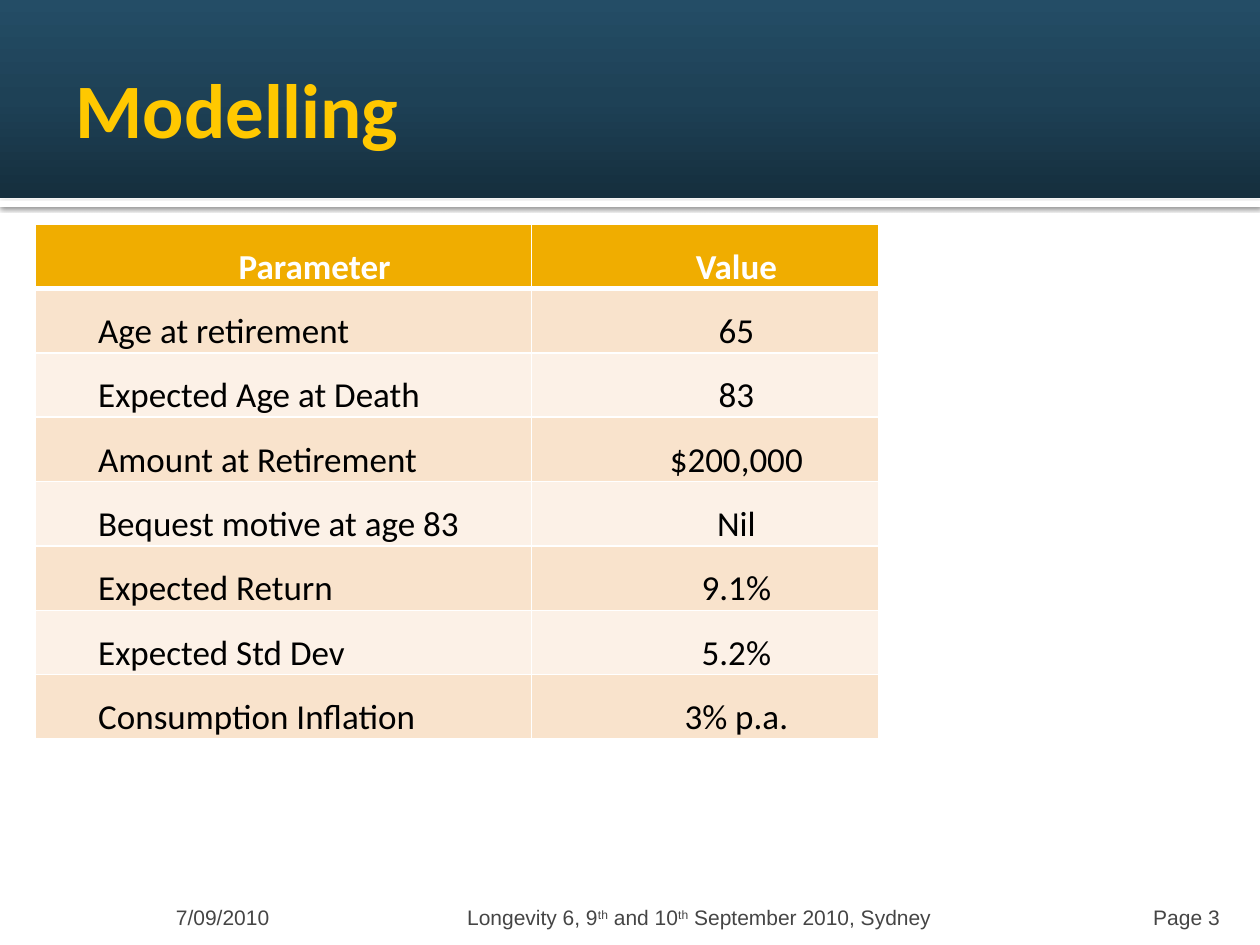
import pptx
import pptx.dml.color
import pptx.enum.shapes
import pptx.enum.text
import pptx.oxml
import pptx.oxml.ns
import pptx.util
from dataclasses import dataclass

Cm = pptx.util.Cm
Pt = pptx.util.Pt
RGB = pptx.dml.color.RGBColor.from_string
ALIGN = pptx.enum.text.PP_ALIGN
ANCHOR = pptx.enum.text.MSO_ANCHOR
NS = pptx.oxml.ns.nsdecls("a")


@dataclass(frozen=True)
class Theme:
    white: str = "FFFFFF"
    black: str = "000000"
    title: str = "FFC800"
    header: str = "F0AD00"
    bands: tuple = ("F9E3CC", "FCF1E7")
    banner: tuple = ((0, "152E3D"), (50, "1E4156"), (100, "244D66"))
    footer: str = "454545"
    heading_font: str = "Calibri"
    footer_font: str = "Arial"
    title_size: int = 44
    table_size: int = 20
    footer_size: int = 12


theme = Theme()


def add_run(p, text, font, size, color, bold=False):
    r = p.add_run()
    r.text = text
    r.font.name = font
    r.font.size = Pt(size)
    r.font.color.rgb = RGB(color)
    r.font.bold = bold
    return r


def set_insets(obj, left, top, right, bottom):
    """Set the margins of a text frame or a table cell, in centimetres."""
    obj.margin_left, obj.margin_top = Cm(left), Cm(top)
    obj.margin_right, obj.margin_bottom = Cm(right), Cm(bottom)


prs = pptx.Presentation()
prs.slide_width, prs.slide_height = Cm(25.4), Cm(19.05)
s = prs.slides.add_slide(prs.slide_layouts[5])

# Header: white strip with a shadow, then the gradient banner
RECT = pptx.enum.shapes.MSO_SHAPE.RECTANGLE
strip = s.shapes.add_shape(RECT, 0, Cm(4.04), prs.slide_width, Cm(0.13))
banner = s.shapes.add_shape(RECT, 0, 0, prs.slide_width, Cm(3.99))
for sp in (strip, banner):
    sp.shadow.inherit = False
    sp.line.fill.background()
strip.fill.solid()
strip.fill.fore_color.rgb = RGB(theme.white)
effects = strip._element.spPr.find(pptx.oxml.ns.qn("a:effectLst"))
effects.append(pptx.oxml.parse_xml(
    f'<a:outerShdw {NS} blurRad="{Pt(2.5)}" dist="{Pt(0.8)}" dir="5400000" rotWithShape="0">'
    f'<a:srgbClr val="{theme.black}"><a:alpha val="60000"/></a:srgbClr></a:outerShdw>'))

banner.fill.gradient()
banner.fill.gradient_angle = 90
stops = banner._element.spPr.find(".//" + pptx.oxml.ns.qn("a:gsLst"))
for stop in list(stops):
    stops.remove(stop)
for pos, color in theme.banner:
    stops.append(pptx.oxml.parse_xml(
        f'<a:gs {NS} pos="{pos * 1000}"><a:srgbClr val="{color}"/></a:gs>'))

# Title, brought in front of the banner
title = s.shapes.title
title.left, title.top, title.width, title.height = Cm(1.27), Cm(0.43), Cm(22.86), Cm(3.48)
s.shapes._spTree.append(title._element)
tf = title.text_frame
tf.vertical_anchor = ANCHOR.MIDDLE
set_insets(tf, 0.25, 0.13, 0.13, 0.13)
p = tf.paragraphs[0]
p.alignment = ALIGN.LEFT
add_run(p, "Modelling", theme.heading_font, theme.title_size, theme.title, True)

# Parameter table
rows = [
    ("Parameter", "Value"),
    ("Age at retirement", "65"),
    ("Expected Age at Death", "83"),
    ("Amount at Retirement", "$200,000"),
    ("Bequest motive at age 83", "Nil"),
    ("Expected Return", "9.1%"),
    ("Expected Std Dev", "5.2%"),
    ("Consumption Inflation", "3% p.a."),
]
col_widths = (10, 7)
row_height = 1.04
table = s.shapes.add_table(len(rows), 2, Cm(0.71), Cm(4.52), Cm(sum(col_widths)),
                           Cm(row_height * len(rows))).table
for column, width in zip(table.columns, col_widths):
    column.width = Cm(width)
for i, row in enumerate(rows):
    table.rows[i].height = Cm(row_height)
    is_header = i == 0
    for j, text in enumerate(row):
        cell = table.cell(i, j)
        cell.vertical_anchor = ANCHOR.MIDDLE
        set_insets(cell, 0, 0, 0, 0)
        tcPr = cell._tc.get_or_add_tcPr()
        for side in "LRTB":
            thick = (is_header and side == "B") or (i == 1 and side == "T")
            tcPr.append(pptx.oxml.parse_xml(
                f'<a:ln{side} {NS} w="{Pt(3 if thick else 1)}"><a:solidFill>'
                f'<a:srgbClr val="{theme.white}"/></a:solidFill></a:ln{side}>'))
        cell.fill.solid()
        cell.fill.fore_color.rgb = RGB(theme.header if is_header else theme.bands[(i - 1) % 2])
        p = cell.text_frame.paragraphs[0]
        p.alignment = ALIGN.CENTER if is_header or j == 1 else ALIGN.LEFT
        p.line_spacing = 1.5
        pPr = p._p.get_or_add_pPr()
        pPr.set("marL", "0")
        pPr.set("indent", str(Cm(1.27)))
        add_run(p, text, theme.heading_font, theme.table_size,
                theme.white if is_header else theme.black, is_header)

# Footer: left, width, alignment, left and right insets, runs (text, raised)
footers = [
    (1.27, 4.29, ALIGN.RIGHT, 0.3, 0.13, [("7/09/2010", False)]),
    (22.63, 2.21, ALIGN.RIGHT, 0.25, 0.25, [("Page 3", False)]),
    (5.56, 17.07, ALIGN.CENTER, 0.13, 0.13,
     [("Longevity 6, 9", False), ("th", True), (" and 10", False), ("th", True),
      (" September 2010, Sydney", False)]),
]
for left, width, align, inset_left, inset_right, runs in footers:
    tf = s.shapes.add_textbox(Cm(left), Cm(17.98), Cm(width), Cm(0.76)).text_frame
    tf.word_wrap = True
    tf.vertical_anchor = ANCHOR.BOTTOM
    set_insets(tf, inset_left, 0.13, inset_right, 0)
    p = tf.paragraphs[0]
    p.alignment = align
    for text, raised in runs:
        r = add_run(p, text, theme.footer_font, theme.footer_size, theme.footer)
        if raised:
            r.font._element.set("baseline", "30000")

prs.save("out.pptx")
